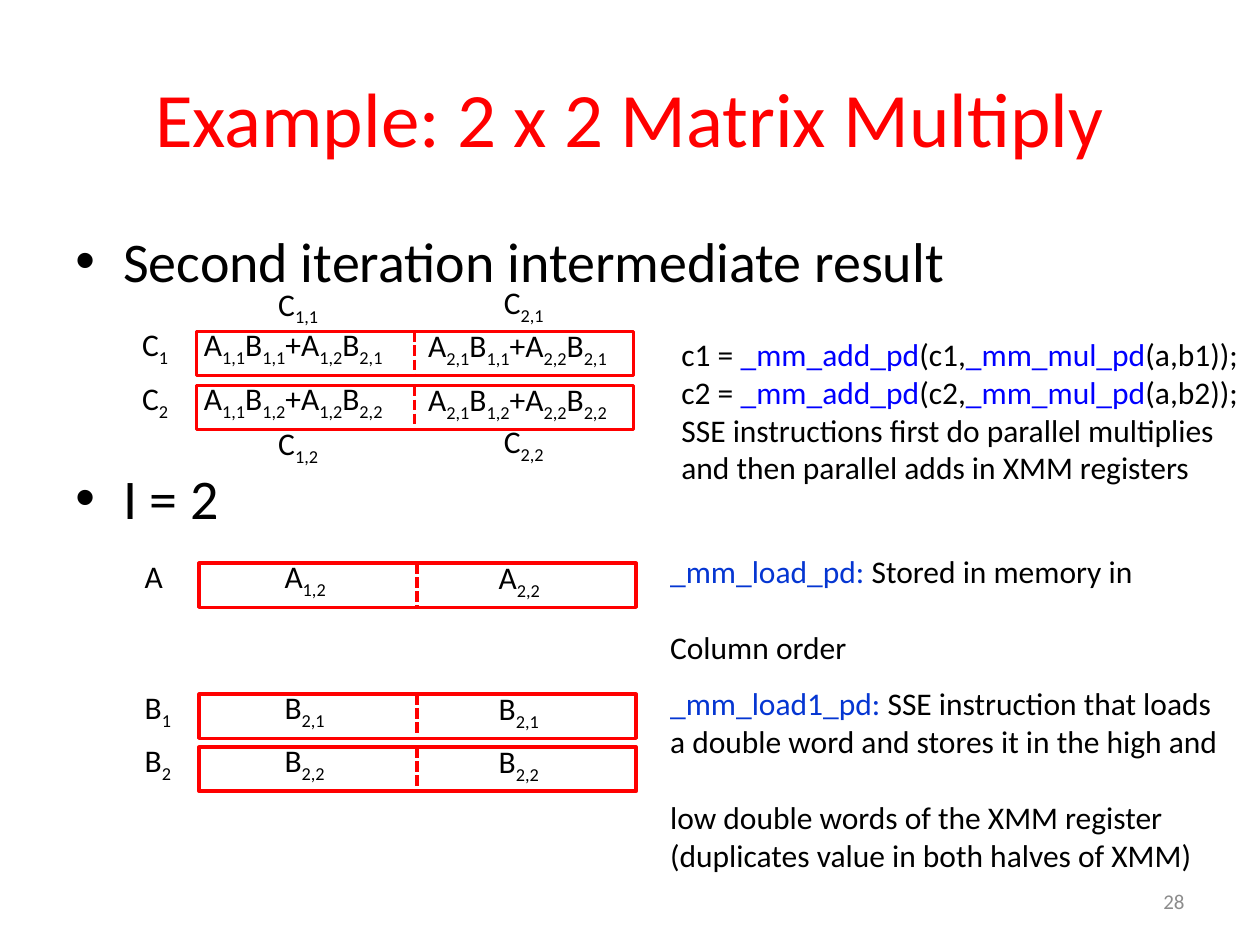
"""Build the 2 x 2 matrix multiply slide with its XMM register rows."""
import pptx
import pptx.util
import pptx.dml.color
import pptx.enum.dml
import pptx.enum.shapes
import pptx.enum.text
import pptx.oxml.ns
from lxml import etree
from pptx.util import Inches, Pt

RED, BLACK, BLUE, ROYAL, GREY = "FF0000", "000000", "0000FF", "0536D2", "8C8C8C"
ALIGN = pptx.enum.text.PP_ALIGN
ANCHOR = pptx.enum.text.MSO_ANCHOR
REGISTER_WIDTH, REGISTER_HEIGHT = 3.47, 0.35


def rgb(value):
    """Return the colour for a hex string."""
    return pptx.dml.color.RGBColor.from_string(value)


def write(shape, lines, size=18, color=BLACK, accent=None, align=ALIGN.LEFT,
          anchor=ANCHOR.TOP, wrap=False, gaps=None):
    """Write lines; braces mark accent-coloured text, or subscripts without an accent."""
    frame = shape.text_frame
    frame.word_wrap = wrap
    frame.vertical_anchor = anchor
    for index, line in enumerate(lines):
        paragraph = frame.add_paragraph() if index else frame.paragraphs[0]
        paragraph.alignment = align
        paragraph.space_before = Pt((gaps or {}).get(index, 0))
        for position, part in enumerate(line.replace("}", "{").split("{")):
            if not part:
                continue
            marked = position % 2 == 1
            run = paragraph.add_run()
            run.text = part
            run.font.name = "Calibri"
            run.font.size = Pt(size)
            run.font.color.rgb = rgb(accent if marked and accent else color)
            if marked and not accent:
                run.font._element.set("baseline", "-25000")
    return frame


def add_text(slide, place, lines, **style):
    """Add a text box at a place given in inches."""
    return write(slide.shapes.add_textbox(*map(Inches, place)), lines, **style)


def add_bullets(slide, place, lines, **style):
    """Add a bulleted list with hanging indents."""
    for paragraph in add_text(slide, place, lines, **style).paragraphs:
        properties = paragraph._p.get_or_add_pPr()
        properties.set("marL", str(Inches(0.38)))
        properties.set("indent", str(-Inches(0.38)))
        for tag, attribute, value in (("a:buFont", "typeface", "Arial"),
                                      ("a:buChar", "char", "•")):
            etree.SubElement(properties, pptx.oxml.ns.qn(tag)).set(attribute, value)


def add_register(slide, left, top):
    """Draw a register outline split by a dashed divider."""
    register = slide.shapes.add_shape(
        pptx.enum.shapes.MSO_SHAPE.RECTANGLE, Inches(left), Inches(top),
        Inches(REGISTER_WIDTH), Inches(REGISTER_HEIGHT))
    register.shadow.inherit = False
    register.fill.background()
    middle = Inches(left + 1.73)
    divider = slide.shapes.add_connector(
        pptx.enum.shapes.MSO_CONNECTOR.STRAIGHT, middle, Inches(top),
        middle, Inches(top + REGISTER_HEIGHT))
    etree.SubElement(divider._element.spPr, pptx.oxml.ns.qn("a:effectLst"))
    for outline in (register.line, divider.line):
        outline.color.rgb = rgb(RED)
        outline.width = Pt(2)
    divider.line.dash_style = pptx.enum.dml.MSO_LINE.SQUARE_DOT


def add_register_row(slide, left, top, label, low, high, cells):
    """Add a labelled register with the contents of its two halves."""
    low_left, high_left, width = cells
    add_register(slide, left, top)
    add_text(slide, (left - 0.53, top - 0.1, 0.43, 0.4), [label])
    add_text(slide, (low_left, top - 0.1, width, 0.4), [low])
    add_text(slide, (high_left, top - 0.09, width, 0.4), [high])


def main():
    """Build and save the slide."""
    deck = pptx.Presentation()
    deck.slide_width, deck.slide_height = Inches(10), Inches(7.5)
    slide = deck.slides.add_slide(deck.slide_layouts[5])

    title = slide.shapes.title
    title.left, title.top, title.width, title.height = map(Inches, (0.5, 0.3, 9, 1.25))
    write(title, ["Example: 2 x 2 Matrix Multiply"], size=44, color=RED,
          align=ALIGN.CENTER, anchor=ANCHOR.MIDDLE, wrap=True)
    add_bullets(slide, (0.5, 1.75, 9, 2.98), ["Second iteration intermediate result", "I = 2"],
                size=32, wrap=True, gaps={0: 6.4, 1: 97})

    sums, entries = (1.52, 3.3, 1.81), (2.16, 3.86, 0.55)
    for row in (
        (1.56, 2.63, "C{1}", "A{1,1}B{1,1}+A{1,2}B{2,1}", "A{2,1}B{1,1}+A{2,2}B{2,1}", sums),
        (1.56, 3.06, "C{2}", "A{1,1}B{1,2}+A{1,2}B{2,2}", "A{2,1}B{1,2}+A{2,2}B{2,2}", sums),
        (1.58, 4.47, "A", "A{1,2}", "A{2,2}", entries),
        (1.58, 5.51, "B{1}", "B{2,1}", "B{2,1}", entries),
        (1.58, 5.93, "B{2}", "B{2,2}", "B{2,2}", entries),
    ):
        add_register_row(slide, *row)

    for left, top, result in ((2.11, 2.21, "C{1,1}"), (2.11, 3.32, "C{1,2}"),
                              (3.9, 2.2, "C{2,1}"), (3.9, 3.3, "C{2,2}")):
        add_text(slide, (left, top, 0.55, 0.4), [result])

    add_text(slide, (5.31, 2.61, 4.66, 1.31), [
        "c1 = {_mm_add_pd}(c1,{_mm_mul_pd}(a,b1));",
        "c2 = {_mm_add_pd}(c2,{_mm_mul_pd}(a,b2));",
        "SSE instructions first do parallel multiplies",
        "and then parallel adds in XMM registers"], accent=BLUE)
    add_text(slide, (5.22, 4.33, 3.91, 0.71), [
        "{_mm_load_pd: }Stored in memory in", "Column order"], accent=ROYAL, gaps={1: 22})
    add_text(slide, (5.22, 5.38, 4.59, 1.31), [
        "{_mm_load1_pd: }SSE instruction that loads",
        "a double word and stores it in the high and",
        "low double words of the XMM register",
        "(duplicates value in both halves of XMM)"], accent=ROYAL, gaps={2: 22})
    add_text(slide, (7.17, 6.95, 2.33, 0.4), ["28"], size=12, color=GREY,
             align=ALIGN.RIGHT, anchor=ANCHOR.MIDDLE, wrap=True)
    deck.save("out.pptx")


if __name__ == "__main__":
    main()
